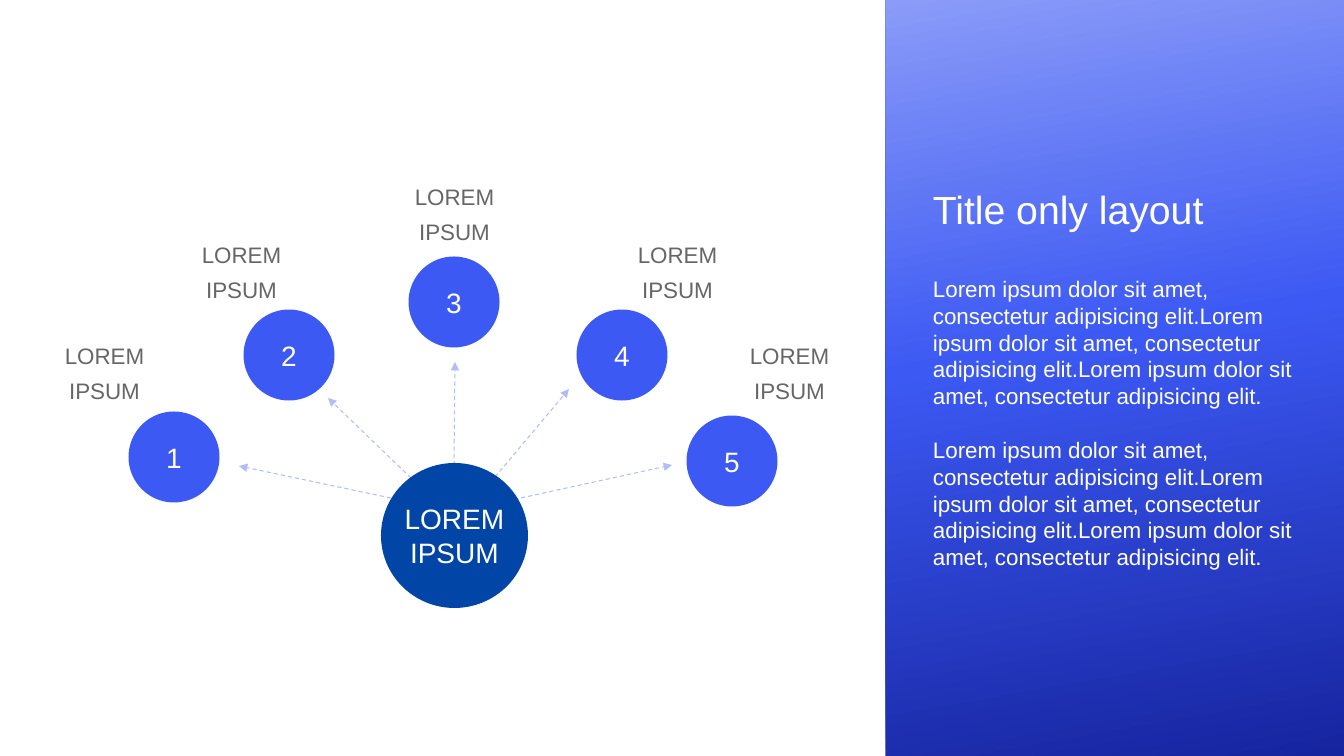
from lxml import etree
from pptx import Presentation
from pptx.dml.color import RGBColor
from pptx.enum.dml import MSO_LINE
from pptx.enum.shapes import MSO_CONNECTOR, MSO_SHAPE
from pptx.enum.text import MSO_ANCHOR, PP_ALIGN
from pptx.oxml.ns import qn
from pptx.util import Pt

OVAL, RECT = MSO_SHAPE.OVAL, MSO_SHAPE.RECTANGLE
STRAIGHT, DASH = MSO_CONNECTOR.STRAIGHT, MSO_LINE.DASH
MIDDLE, CENTER, LEFT = MSO_ANCHOR.MIDDLE, PP_ALIGN.CENTER, PP_ALIGN.LEFT

# Content: branch = (number, label, circle centre, label top-left, arrow start, arrow end)
BRANCHES = [
    ("1", "LOREM IPSUM", (174, 457), (35, 329), (405, 501), (239, 466)),
    ("2", "LOREM IPSUM", (289, 355), (172, 228), (411, 478), (328, 398)),
    ("3", "LOREM IPSUM", (454, 302), (385, 170), (454, 465), (455, 362)),
    ("4", "LOREM IPSUM", (622, 355), (608, 228), (495, 477), (569, 389)),
    ("5", "LOREM IPSUM", (732, 461), (720, 329), (507, 501), (672, 465)),
]
HUB = "LOREM IPSUM"
TITLE = "Title only layout"
SENTENCE = "Lorem ipsum dolor sit amet, consectetur adipisicing elit."
BODY = [SENTENCE * 3, SENTENCE * 3]

# Style
FONT = "Arial"
WHITE, GREY, BLUE, NAVY, PALE = "FFFFFF", "666666", "3C59F3", "0146A7", "B1BDFA"
PANEL_STOPS = [(0, "16249F"), (55, BLUE), (100, "8A9BF8")]
PANEL_ANGLE = 260

# Geometry in px
SLIDE_W, SLIDE_H = 1344, 756
PANEL_X = 886
TEXT_X, TEXT_W = 923, 385
CIRCLE = 91
LABEL_W, LABEL_H = 139, 84
HUB_BOX = (381, 463, 147, 145)
EMU_PER_PX = 914400 / 100.8


def px(*lengths):
    return [round(length * EMU_PER_PX) for length in lengths]


def color(hex_code):
    return RGBColor.from_string(hex_code)


def write(frame, paragraphs, size, ink, align=LEFT, line_spacing=None, gap=0):
    for index, words in enumerate(paragraphs):
        paragraph = frame.paragraphs[0] if index == 0 else frame.add_paragraph()
        paragraph.alignment = align
        if line_spacing:
            paragraph.line_spacing = line_spacing
        if index:
            paragraph.space_before = Pt(gap)
        run = paragraph.add_run()
        run.text = words
        run.font.name, run.font.size = FONT, Pt(size)
        run.font.color.rgb = color(ink)


def add_text(box, paragraphs, size, ink, **layout):
    frame = slide.shapes.add_textbox(*px(*box)).text_frame
    frame.word_wrap = True
    write(frame, paragraphs, size, ink, **layout)


def add_plain(kind, box):
    shape = slide.shapes.add_shape(kind, *px(*box))
    shape.shadow.inherit = False
    shape.line.fill.background()
    return shape


def add_circle(box, words, fill, wrap):
    circle = add_plain(OVAL, box)
    circle.fill.solid()
    circle.fill.fore_color.rgb = color(fill)
    frame = circle.text_frame
    frame.word_wrap, frame.vertical_anchor = wrap, MIDDLE
    frame.margin_left = frame.margin_right = frame.margin_top = frame.margin_bottom = 0
    write(frame, [words], 20, WHITE, align=CENTER)


def add_arrow(start, end):
    arrow = slide.shapes.add_connector(STRAIGHT, *px(*start, *end))
    arrow.line.color.rgb = color(PALE)
    arrow.line.width, arrow.line.dash_style = Pt(0.75), DASH
    etree.SubElement(arrow.line._get_or_add_ln(), qn("a:tailEnd"), type="triangle")
    etree.SubElement(arrow._element.spPr, qn("a:effectLst"))


def add_panel():
    panel = add_plain(RECT, (PANEL_X, 0, SLIDE_W - PANEL_X, SLIDE_H))
    panel.fill.gradient()
    panel.fill.gradient_angle = 360 - PANEL_ANGLE  # measured counter-clockwise
    stops = panel._element.spPr.find(qn("a:gradFill")).find(qn("a:gsLst"))
    for stop in list(stops):
        stops.remove(stop)
    for percent, hex_code in PANEL_STOPS:
        stop = etree.SubElement(stops, qn("a:gs"), pos=str(percent * 1000))
        etree.SubElement(stop, qn("a:srgbClr"), val=hex_code)


prs = Presentation()
prs.slide_width, prs.slide_height = px(SLIDE_W, SLIDE_H)
slide = prs.slides.add_slide(prs.slide_layouts[6])

# Branches around the hub
for number, label, (cx, cy), label_at, start, end in BRANCHES:
    add_arrow(start, end)
    add_circle((cx - CIRCLE / 2, cy - CIRCLE / 2, CIRCLE, CIRCLE), number, BLUE, False)
    add_text((*label_at, LABEL_W, LABEL_H), [label], 16, GREY,
             align=CENTER, line_spacing=1.3)
add_circle(HUB_BOX, HUB, NAVY, True)

# Text panel
add_panel()
add_text((TEXT_X, 180, TEXT_W, 58), [TITLE], 28, WHITE)
add_text((TEXT_X, 270, TEXT_W, 351), BODY, 16, WHITE, gap=19)

prs.save("out.pptx")
